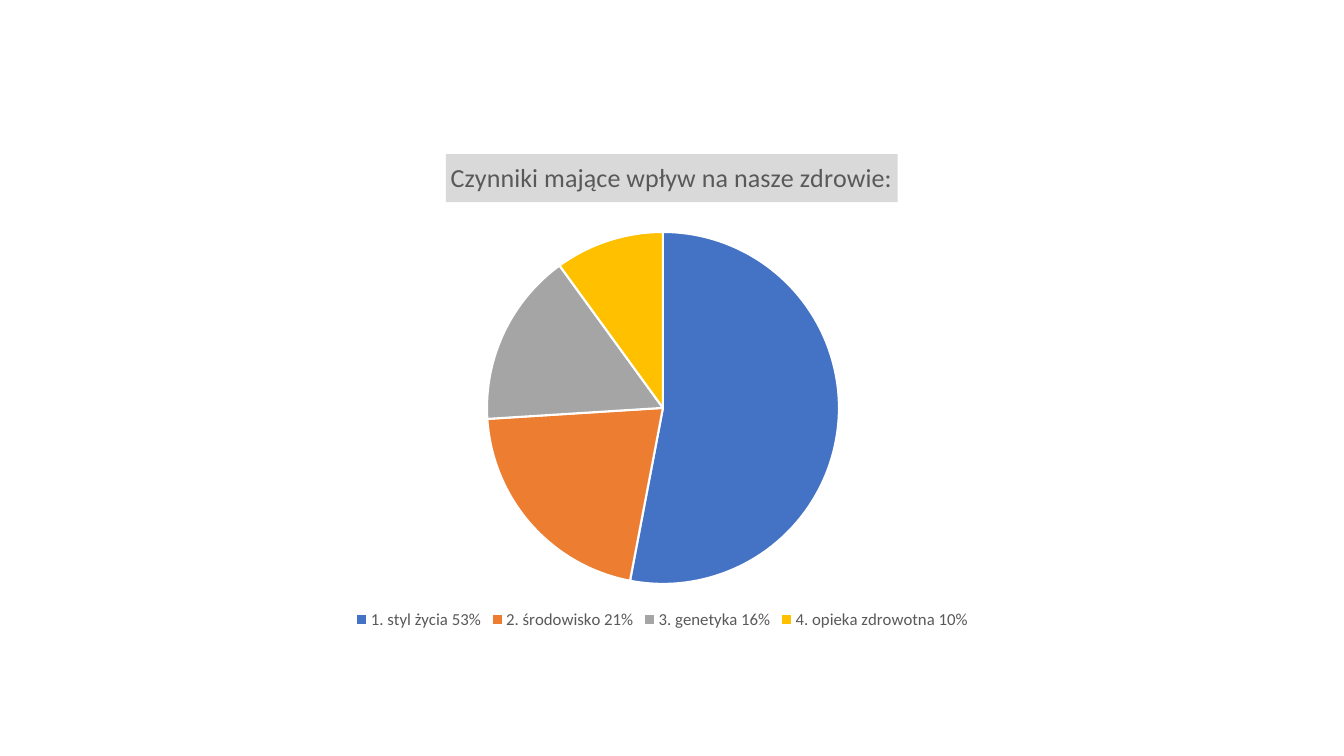
from dataclasses import dataclass

from lxml.etree import SubElement
from pptx import Presentation
from pptx.chart.data import CategoryChartData
from pptx.dml.color import RGBColor
from pptx.enum.chart import XL_CHART_TYPE as ChartType, XL_LEGEND_POSITION as LegendPosition
from pptx.oxml import parse_xml
from pptx.oxml.ns import nsdecls, qn
from pptx.util import Emu, Pt

EMU_PER_PX = 914400 / 100.8


@dataclass(frozen=True)
class Theme:
    font: str = "Calibri"
    text: str = "595959"
    title_fill: str = "D9D9D9"
    slice_border: str = "FFFFFF"
    slices: tuple = ("4472C4", "ED7D31", "A5A5A5", "FFC000")
    title_size: float = 18.6
    legend_size: float = 12
    border_width: float = 1.5


THEME = Theme()
TITLE = "Czynniki mające wpływ na nasze zdrowie:"
FACTORS = {"styl życia": 53, "środowisko": 21, "genetyka": 16, "opieka zdrowotna": 10}


def px(length):
    return Emu(round(length * EMU_PER_PX))


def color(value):
    return RGBColor.from_string(value)


def style_font(font, size):
    font.name = THEME.font
    font.size = Pt(size)
    font.bold = False
    font.color.rgb = color(THEME.text)


def set_layout(element, settings):
    layout = element.find(qn("c:layout"))
    if layout is None:
        layout = parse_xml(f"<c:layout {nsdecls('c')}/>")
        element.insert(0, layout)
    manual = SubElement(layout, qn("c:manualLayout"))
    for name, value in settings.items():
        SubElement(manual, qn(f"c:{name}")).set("val", str(value))


def place_parts(chart, width, height):
    title_left = 363
    pie_left, pie_top, pie_size = 404, 78, 352
    set_layout(chart.chart_title._element, {
        "xMode": "edge", "yMode": "edge",
        "x": round(title_left / width, 4), "y": 0,
    })
    plot_area = chart._chartSpace.find(f"{qn('c:chart')}/{qn('c:plotArea')}")
    set_layout(plot_area, {
        "layoutTarget": "inner", "xMode": "edge", "yMode": "edge",
        "x": round(pie_left / width, 4), "y": round(pie_top / height, 4),
        "w": round(pie_size / width, 4), "h": round(pie_size / height, 4),
    })


def add_factor_chart(slide, left, top, width, height):
    data = CategoryChartData()
    data.categories = [
        f"{number}. {factor} {share}%"
        for number, (factor, share) in enumerate(FACTORS.items(), 1)
    ]
    data.add_series(TITLE, FACTORS.values())
    frame = slide.shapes.add_chart(
        ChartType.PIE, px(left), px(top), px(width), px(height), data
    )
    chart = frame.chart
    style_font(chart.font, THEME.legend_size)

    chart.has_title = True
    title = chart.chart_title
    title.text_frame.text = TITLE
    style_font(title.text_frame.paragraphs[0].font, THEME.title_size)
    title.format.fill.solid()
    title.format.fill.fore_color.rgb = color(THEME.title_fill)

    chart.has_legend = True
    chart.legend.position = LegendPosition.BOTTOM
    chart.legend.include_in_layout = False
    style_font(chart.legend.font, THEME.legend_size)

    plot = chart.plots[0]
    plot.vary_by_categories = True
    for index, slice_color in enumerate(THEME.slices):
        slice_format = plot.series[0].points[index].format
        slice_format.fill.solid()
        slice_format.fill.fore_color.rgb = color(slice_color)
        slice_format.line.color.rgb = color(THEME.slice_border)
        slice_format.line.width = Pt(THEME.border_width)
    place_parts(chart, width, height)


def main():
    presentation = Presentation()
    presentation.slide_width = px(1344)
    presentation.slide_height = px(756)
    slide = presentation.slides.add_slide(presentation.slide_layouts.get_by_name("Blank"))
    add_factor_chart(slide, 83, 154, 1159, 480)
    presentation.save("out.pptx")


if __name__ == "__main__":
    main()
